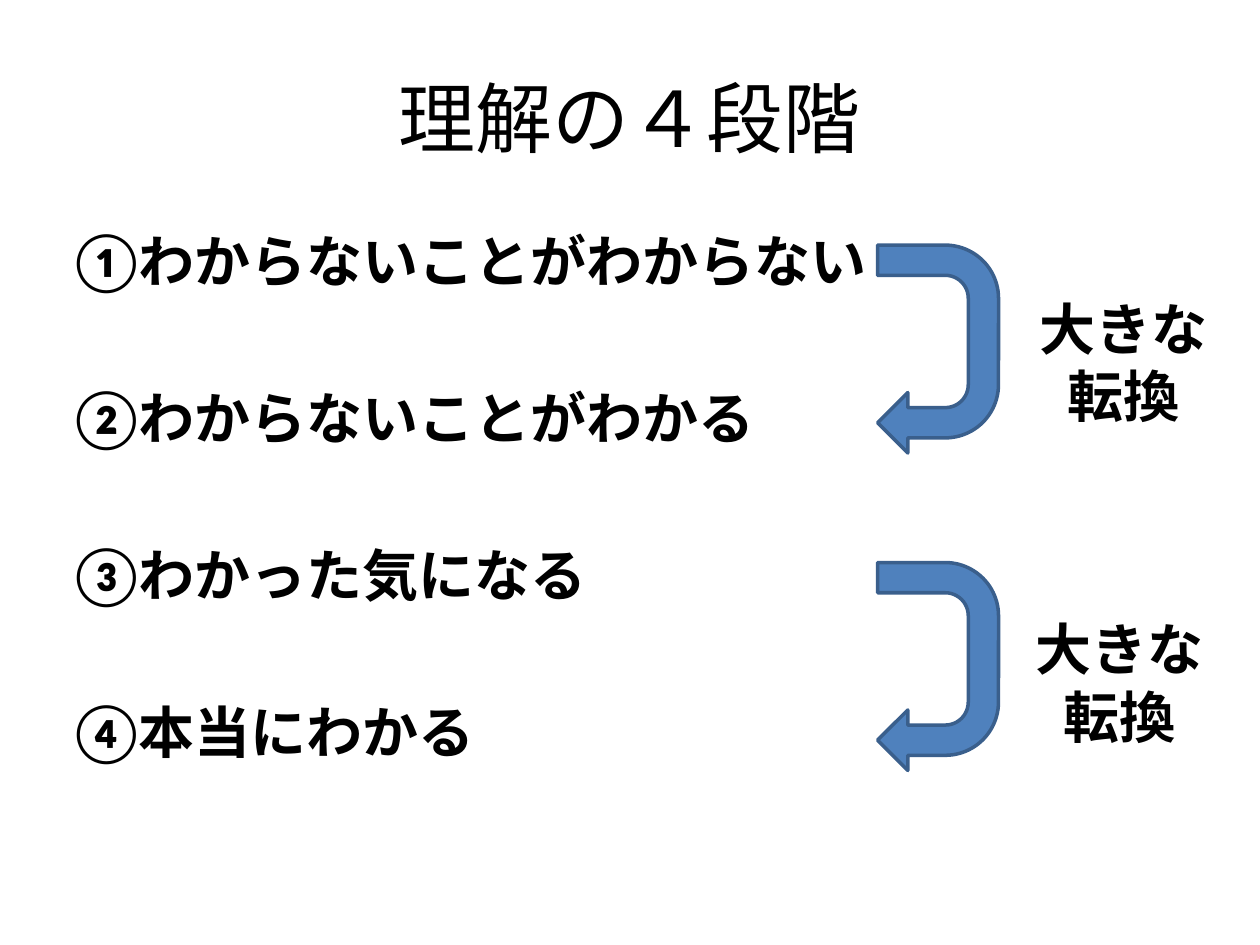
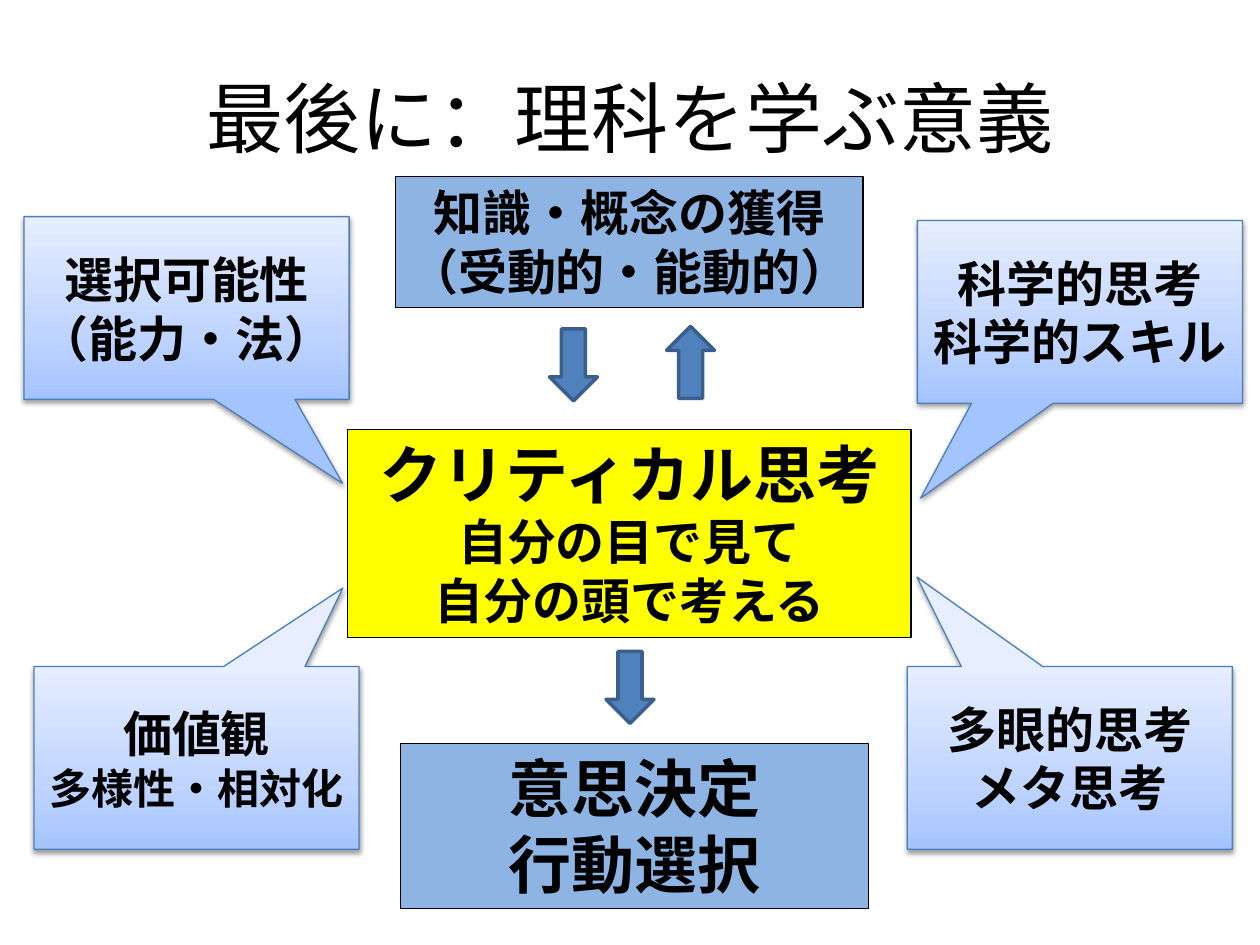
from dataclasses import dataclass

from pptx import Presentation
from pptx.dml.color import RGBColor
from pptx.enum.shapes import MSO_SHAPE
from pptx.enum.text import MSO_ANCHOR, MSO_AUTO_SIZE, PP_ALIGN
from pptx.oxml import parse_xml
from pptx.oxml.ns import nsdecls, qn
from pptx.util import Pt

RECTANGLE = MSO_SHAPE.RECTANGLE
CALLOUT = MSO_SHAPE.RECTANGULAR_CALLOUT
U_TURN = MSO_SHAPE.U_TURN_ARROW
DOWN = MSO_SHAPE.DOWN_ARROW
UP = MSO_SHAPE.UP_ARROW
TOP, MIDDLE = MSO_ANCHOR.TOP, MSO_ANCHOR.MIDDLE
LEFT, CENTER = PP_ALIGN.LEFT, PP_ALIGN.CENTER
NO_FIT, GROW = MSO_AUTO_SIZE.NONE, MSO_AUTO_SIZE.SHAPE_TO_FIT_TEXT

COLORS = {
    "text": "000000",
    "arrow": "4F81BD",
    "arrow_edge": "3A5F8C",
    "outer_step": "8EB4E3",
    "core_step": "FFFF00",
    "step_edge": "000000",
    "callout_edge": "4B7EBC",
    "shadow": "000000",
}
CALLOUT_STOPS = {0: "A4C4FF", 35: "BFD4FF", 100: "E6EEFF"}
MAIN_FONT = "Lato"
CALLOUT_FONT = "Noto Sans CJK JP"
STAGE_SIZE = 32
STAGE_GAP = 51.2


@dataclass(frozen=True)
class Box:
    left: float
    top: float
    width: float
    height: float

    def lengths(self) -> tuple:
        return Pt(self.left), Pt(self.top), Pt(self.width), Pt(self.height)


@dataclass(frozen=True)
class Step:
    box: Box
    color: str
    text: str
    sizes: tuple


@dataclass(frozen=True)
class Viewpoint:
    left: float
    top: float
    pointer: tuple
    text: str
    sizes: tuple = (28, 28)


@dataclass(frozen=True)
class Turn:
    arrow_top: float
    label_left: float
    label_top: float


@dataclass(frozen=True)
class Flow:
    kind: int
    left: float
    top: float


TITLE_BOX = Box(36, 21.6, 648, 90)
STAGES_BOX = Box(36, 126, 648, 356.4)
STAGES = (
    "①わからないことがわからない",
    "②わからないことがわかる",
    "③わかった気になる",
    "④本当にわかる",
)
TURNS = (Turn(164.9, 586.1, 164.9), Turn(346.3, 583.9, 347.8))
STEPS = (
    Step(Box(229, 424.8, 267.1, 94.3), "outer_step", "意思決定\n行動選択", (36, 36)),
    Step(Box(226.1, 100.8, 267.1, 75), "outer_step",
         "知識・概念の獲得\n（受動的・能動的）", (28, 28)),
    Step(Box(198.8, 245.5, 321.8, 118.8), "core_step",
         "クリティカル思考\n自分の目で見て\n自分の頭で考える", (36, 28, 28)),
)
FLOWS = (Flow(DOWN, 346.3, 372.2), Flow(DOWN, 314, 187.9), Flow(UP, 380.9, 186.5))
VIEWPOINTS = (
    Viewpoint(13.7, 123.8, (0.48, 0.96), "選択可能性\n（能力・法）"),
    Viewpoint(524.2, 126, (-0.49, 1.02), "科学的思考\n科学的スキル"),
    Viewpoint(19.4, 380.9, (0.45, -0.93), "価値観\n多様性・相対化", (28, 24)),
    Viewpoint(518.4, 380.9, (-0.47, -0.99), "多眼的思考\nメタ思考"),
)


def rgb(name: str) -> RGBColor:
    return RGBColor.from_string(COLORS[name])


def write(frame, text: str, sizes: tuple, bold: bool = True,
          font: str = MAIN_FONT, align=CENTER) -> None:
    frame.text = text
    for paragraph, size in zip(frame.paragraphs, sizes):
        paragraph.alignment = align
        for run in paragraph.runs:
            run.font.size = Pt(size)
            run.font.bold = bold
            run.font.color.rgb = rgb("text")
            run.font.name = font
            run.font._element.append(
                parse_xml(f'<a:ea {nsdecls("a")} typeface="{MAIN_FONT}"/>'))


def place(placeholder, box: Box) -> None:
    (placeholder.left, placeholder.top,
     placeholder.width, placeholder.height) = box.lengths()


def add_titled_slide(deck, layout: int, title: str):
    slide = deck.slides.add_slide(deck.slide_layouts[layout])
    heading = slide.shapes.title
    place(heading, TITLE_BOX)
    heading.text_frame.vertical_anchor = MIDDLE
    write(heading.text_frame, title, (44,), bold=False)
    return slide


def add_outlined(slide, kind: int, box: Box, edge: str, weight: float):
    shape = slide.shapes.add_shape(kind, *box.lengths())
    shape.shadow.inherit = False
    shape.line.color.rgb = rgb(edge)
    shape.line.width = Pt(weight)
    return shape


def add_arrow(slide, kind: int, box: Box):
    arrow = add_outlined(slide, kind, box, "arrow_edge", 2)
    arrow.fill.solid()
    arrow.fill.fore_color.rgb = rgb("arrow")
    return arrow


def add_stages(slide) -> None:
    body = slide.placeholders[1]
    place(body, STAGES_BOX)
    frame = body.text_frame
    write(frame, "\n".join(STAGES), (STAGE_SIZE,) * len(STAGES), align=LEFT)
    frame.auto_size = NO_FIT
    for number, paragraph in enumerate(frame.paragraphs):
        if number:
            paragraph.space_before = Pt(STAGE_GAP)
        properties = paragraph._p.get_or_add_pPr()
        properties.set("marL", "0")
        properties.set("indent", "0")
        properties.append(parse_xml(f'<a:buNone {nsdecls("a")}/>'))


def add_turn(slide, turn: Turn) -> None:
    arrow = add_arrow(slide, U_TURN, Box(476.6, turn.arrow_top, 118.8, 69.1))
    arrow.rotation = 90
    for index, value in enumerate((0.25, 0.25, 0.25, 0.44, 1)):
        arrow.adjustments[index] = value
    label_box = Box(turn.label_left, turn.label_top, 111.6, 85)
    label = slide.shapes.add_textbox(*label_box.lengths()).text_frame
    label.word_wrap = False
    label.auto_size = GROW
    write(label, "大きな\n転換", (STAGE_SIZE, STAGE_SIZE))


def add_step(slide, step: Step) -> None:
    panel = add_outlined(slide, RECTANGLE, step.box, "step_edge", 0.75)
    panel.fill.solid()
    panel.fill.fore_color.rgb = rgb(step.color)
    panel.text_frame.vertical_anchor = TOP
    panel.text_frame.word_wrap = True
    panel.text_frame.auto_size = GROW
    write(panel.text_frame, step.text, step.sizes)


def add_viewpoint(slide, view: Viewpoint) -> None:
    box = Box(view.left, view.top, 185.8, 104.4)
    bubble = add_outlined(slide, CALLOUT, box, "callout_edge", 0.75)
    for index, value in enumerate(view.pointer):
        bubble.adjustments[index] = value
    bubble.fill.gradient()
    bubble.fill.gradient_angle = 90
    properties = bubble._element.spPr
    stops = properties.find(".//" + qn("a:gsLst"))
    for stop in list(stops):
        stops.remove(stop)
    for percent, color in CALLOUT_STOPS.items():
        stops.append(parse_xml(
            f'<a:gs {nsdecls("a")} pos="{percent * 1000}">'
            f'<a:srgbClr val="{color}"/></a:gs>'))
    properties.find(qn("a:effectLst")).append(parse_xml(
        f'<a:outerShdw {nsdecls("a")} blurRad="{Pt(3.1)}" dist="{Pt(1.6)}" '
        f'dir="5400000" rotWithShape="0"><a:srgbClr val="{COLORS["shadow"]}">'
        '<a:alpha val="38000"/></a:srgbClr></a:outerShdw>'))
    bubble.text_frame.vertical_anchor = MIDDLE
    bubble.text_frame.word_wrap = True
    write(bubble.text_frame, view.text, view.sizes, font=CALLOUT_FONT)


def build_stages_slide(deck) -> None:
    slide = add_titled_slide(deck, 1, "理解の４段階")
    add_stages(slide)
    for turn in TURNS:
        add_turn(slide, turn)


def build_meaning_slide(deck) -> None:
    slide = add_titled_slide(deck, 5, "最後に：理科を学ぶ意義")
    for step in STEPS:
        add_step(slide, step)
    for flow in FLOWS:
        add_arrow(slide, flow.kind, Box(flow.left, flow.top, 27.4, 41.2))
    for view in VIEWPOINTS:
        add_viewpoint(slide, view)


def main() -> None:
    deck = Presentation()
    deck.slide_width, deck.slide_height = Pt(720), Pt(540)
    build_stages_slide(deck)
    build_meaning_slide(deck)
    deck.save("out.pptx")


if __name__ == "__main__":
    main()
